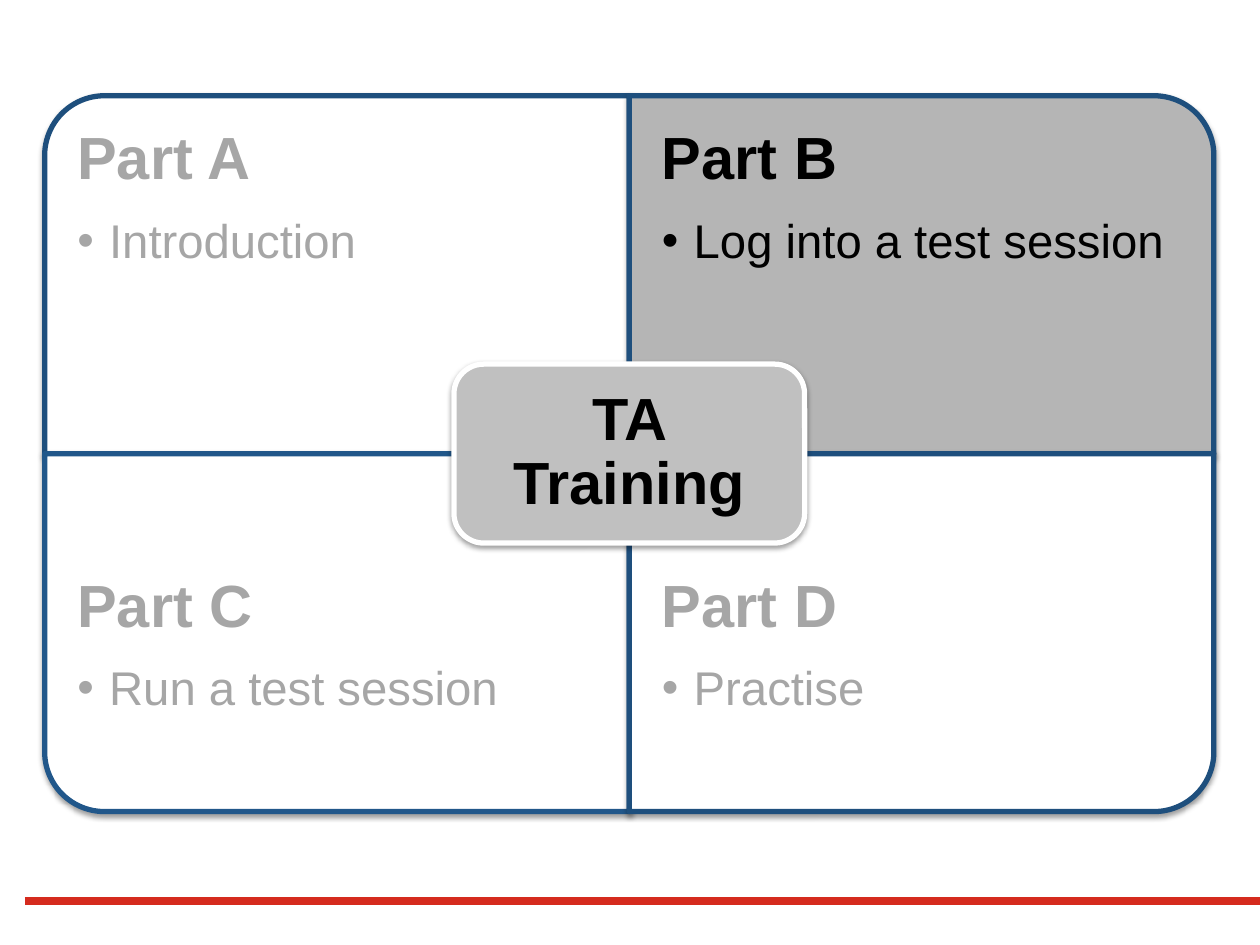
from lxml.etree import SubElement as Sub
from pptx import Presentation
from pptx.dml.color import RGBColor
from pptx.enum.shapes import MSO_CONNECTOR as Link, MSO_SHAPE as Shape
from pptx.enum.text import MSO_ANCHOR as Anchor, PP_ALIGN as Align
from pptx.oxml.ns import qn
from pptx.util import Cm, Pt

HEAD = {"size": Pt(34), "bold": True, "name": "Arial"}
ITEM = {"size": Pt(27), "bold": False, "name": "Arial"}
GREY, BLACK, BLUE = "A6A6A6", "000000", "1E4F7D"
PARTS = [
    ("Part A", "Introduction", 270, "FFFFFF", BLUE, GREY),
    ("Part B", "Log into a test session", 0, "B5B5B5", BLUE, BLACK),
    ("Part C", "Run a test session", 180, "FFFFFF", "21578A", GREY),
    ("Part D", "Practise", 90, "FFFFFF", BLUE, GREY),
]


def tint(color, code):
    """Set a colour format from a hex string."""
    color.rgb = RGBColor.from_string(code)


def shade(shape):
    """Give a shape a soft shadow that falls straight down."""
    shape.shadow.inherit = False
    fx = shape.element.spPr.find(qn("a:effectLst"))
    drop = Sub(fx, qn("a:outerShdw"), blurRad=str(Pt(3.1)), dist=str(Pt(1.6)),
               dir="5400000", algn="ctr", rotWithShape="0")
    Sub(Sub(drop, qn("a:srgbClr"), val=BLACK), qn("a:alpha"), val="38000")


def panel(slide, kind, box, fill, line, turn=0):
    """Draw a filled panel that covers the box after its turn."""
    x, y, w, h = box
    if turn % 180:
        x, y, w, h = x + (w - h) / 2, y + (h - w) / 2, h, w
    shape = slide.shapes.add_shape(kind, Cm(x), Cm(y), Cm(w), Cm(h))
    shape.rotation = turn
    shape.fill.solid()
    tint(shape.fill.fore_color, fill)
    tint(shape.line.color, line)
    shape.line.width = Pt(3)
    shade(shape)


def frame(slide, box, pad, anchor):
    """Add a wrapping text frame with equal margins."""
    text = slide.shapes.add_textbox(*map(Cm, box)).text_frame
    form = {"word_wrap": True, "vertical_anchor": anchor}
    form |= {f"margin_{side}": Cm(pad) for side in ("left", "top", "right", "bottom")}
    for key, val in form.items():
        setattr(text, key, val)
    return text


def write(para, words, font, code, after, align=Align.LEFT):
    """Fill a paragraph with one styled run."""
    form = {"line_spacing": 0.9, "space_after": Pt(after), "alignment": align}
    for key, val in form.items():
        setattr(para, key, val)
    run = para.add_run()
    run.text = words
    for key, val in font.items():
        setattr(run.font, key, val)
    tint(run.font.color, code)


def bullet(para):
    """Turn a paragraph into a second-level bullet."""
    para.level = 1
    props = para._p.get_or_add_pPr()
    props.set("marL", str(Cm(0.64)))
    props.set("indent", str(-Cm(0.64)))
    Sub(props, qn("a:buFont"), typeface="Arial")
    Sub(props, qn("a:buChar"), char="•")


def part(slide, box, low, data):
    """Draw one quarter, its text kept to the outer three fourths."""
    title, item, turn, fill, line, code = data
    x, y, w, h = box
    panel(slide, Shape.ROUND_1_RECTANGLE, box, fill, line, turn)
    text = frame(slide, (x, y + low * h / 4, w, h * 3 / 4), 0.66, Anchor.TOP)
    write(text.paragraphs[0], title, HEAD, code, 14)
    para = text.add_paragraph()
    write(para, item, ITEM, code, 4)
    bullet(para)


def hub(slide, box, words):
    """Draw the label at the centre of the box."""
    x, y, w, h = box
    wide, high, gap = w * 0.3, h / 4, 0.17
    left, top = x + (w - wide) / 2, y + (h - high) / 2
    panel(slide, Shape.ROUNDED_RECTANGLE, (left, top, wide, high), "C0C0C0", "FFFFFF")
    inner = (left + gap, top + gap, wide - 2 * gap, high - 2 * gap)
    text = frame(slide, inner, 0.36, Anchor.MIDDLE)
    write(text.paragraphs[0], words, HEAD, BLACK, 14, Align.CENTER)


def matrix(slide, box):
    """Lay out the four parts around the hub."""
    x, y, w, h = box[0], box[1], box[2] / 2, box[3] / 2
    for i, data in enumerate(PARTS):
        row, col = divmod(i, 2)
        part(slide, (x + col * w, y + row * h, w, h), row, data)
    hub(slide, box, "TA Training")


def rule(slide, x, y, w):
    """Draw the red line at the foot."""
    line = slide.shapes.add_connector(Link.STRAIGHT, Cm(x), Cm(y), Cm(x + w), Cm(y))
    tint(line.line.color, "D52B1E")
    line.line.width = Pt(4.2)
    Sub(line.element.spPr, qn("a:effectLst"))


def main():
    """Build and save the slide."""
    deck = Presentation()
    deck.slide_width, deck.slide_height = Cm(25.4), Cm(19.05)
    slide = deck.slides.add_slide(deck.slide_layouts[6])
    rule(slide, 0.5, 18.16, 24.9)
    matrix(slide, (0.9, 1.93, 23.57, 14.43))
    deck.save("out.pptx")


if __name__ == "__main__":
    main()
